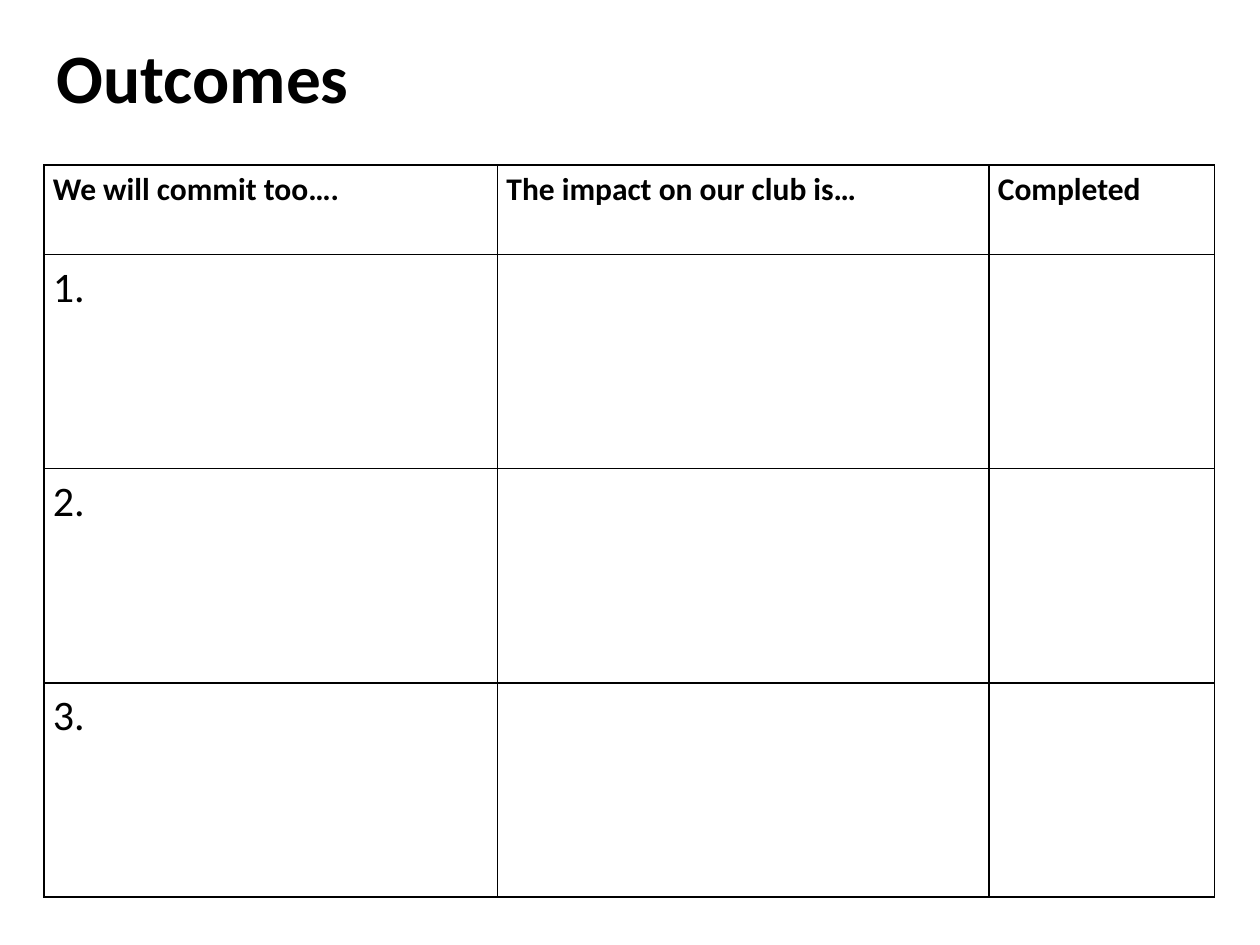
"""Build the Outcomes slide: a title above a commitment table."""
from dataclasses import dataclass

from lxml import etree
from pptx import Presentation
from pptx.dml.color import RGBColor
from pptx.enum.text import MSO_ANCHOR, PP_ALIGN
from pptx.oxml.ns import qn
from pptx.util import Inches, Pt

LEFT, TOP, MIDDLE = PP_ALIGN.LEFT, MSO_ANCHOR.TOP, MSO_ANCHOR.MIDDLE
TITLE_ONLY = 5


@dataclass(frozen=True)
class Theme:
    font: str = "Calibri"
    ink: str = "000000"
    paper: str = "FFFFFF"
    title_size: float = 39.6
    header_size: float = 18
    number_size: float = 24
    border: float = 1
    line_spacing: float = 1.15


theme = Theme()


def style_text(frame, size, bold):
    for para in frame.paragraphs:
        para.alignment = LEFT
        for span in para.runs:
            span.font.name = theme.font
            span.font.size = Pt(size)
            span.font.bold = bold
            span.font.color.rgb = RGBColor.from_string(theme.ink)


def add_borders(cell):
    properties = cell._tc.get_or_add_tcPr()
    for index, side in enumerate(("a:lnL", "a:lnR", "a:lnT", "a:lnB")):
        line = etree.Element(qn(side), w=str(Pt(theme.border)))
        fill = etree.SubElement(line, qn("a:solidFill"))
        etree.SubElement(fill, qn("a:srgbClr"), val=theme.ink)
        properties.insert(index, line)


deck = Presentation()
deck.slide_width, deck.slide_height = Inches(10), Inches(7.5)
page = deck.slides.add_slide(deck.slide_layouts[TITLE_ONLY])
page.background.fill.solid()
page.background.fill.fore_color.rgb = RGBColor.from_string(theme.paper)

margin = Inches(0.35)
title = page.shapes.title
title.left, title.top = margin, Inches(0.21)
title.width, title.height = Inches(9.16), Inches(0.79)
title.text_frame.text = "Outcomes"
title.text_frame.vertical_anchor = MIDDLE
style_text(title.text_frame, theme.title_size, True)

headers = ["We will commit too….", "The impact on our club is…", "Completed"]
rows = [headers] + [[f"{number}.", "", ""] for number in range(1, 4)]
column_widths = [Inches(width) for width in (3.6, 3.9, 1.79)]
row_heights = [Inches(0.71)] + [Inches(1.7)] * 3

table = page.shapes.add_table(
    len(rows), len(headers), margin, Inches(1.31), sum(column_widths), sum(row_heights)
).table
table.first_row = table.horz_banding = False
for column, width in zip(table.columns, column_widths):
    column.width = width
for row, height in zip(table.rows, row_heights):
    row.height = height

for row_index, texts in enumerate(rows):
    is_header = row_index == 0
    size = theme.header_size if is_header else theme.number_size
    for column_index, text in enumerate(texts):
        cell = table.cell(row_index, column_index)
        cell.fill.background()
        add_borders(cell)
        cell.margin_left = cell.margin_right = Inches(0.07)
        cell.margin_top = cell.margin_bottom = 0
        cell.vertical_anchor = TOP
        if text:
            cell.text_frame.text = text
            cell.text_frame.paragraphs[0].line_spacing = theme.line_spacing
            style_text(cell.text_frame, size, is_header)

deck.save("out.pptx")
